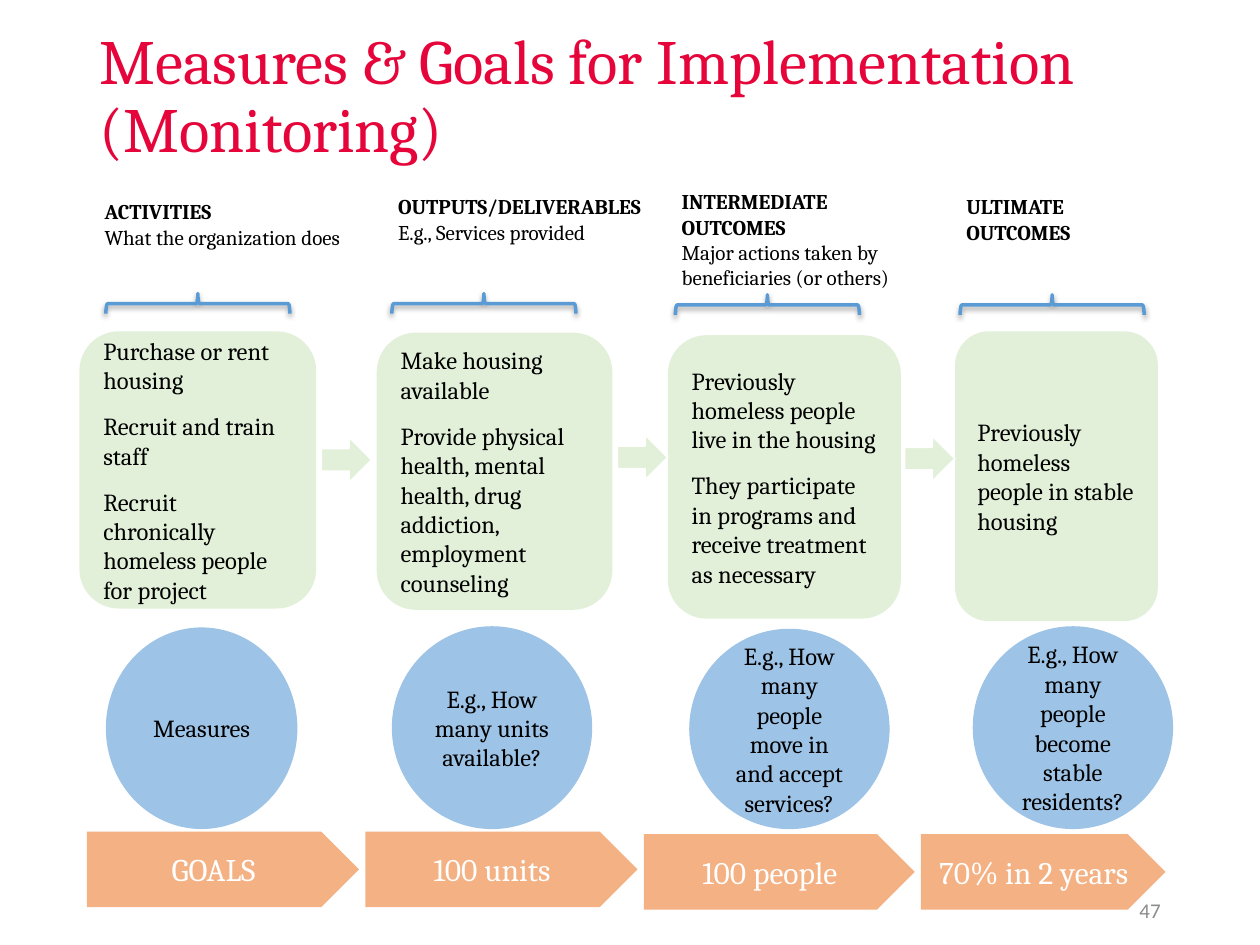
from lxml import etree
from pptx import Presentation
from pptx.dml.color import RGBColor
from pptx.enum.shapes import MSO_SHAPE
from pptx.enum.text import MSO_ANCHOR, PP_ALIGN
from pptx.oxml import parse_xml
from pptx.oxml.ns import nsdecls
from pptx.util import Inches, Pt

LEFT, CENTER, RIGHT = PP_ALIGN.LEFT, PP_ALIGN.CENTER, PP_ALIGN.RIGHT
TOP, MIDDLE = MSO_ANCHOR.TOP, MSO_ANCHOR.MIDDLE
CARD, ARROW = MSO_SHAPE.ROUNDED_RECTANGLE, MSO_SHAPE.RIGHT_ARROW
CIRCLE, BANNER = MSO_SHAPE.OVAL, MSO_SHAPE.PENTAGON
BRACE = MSO_SHAPE.LEFT_BRACE

RED = RGBColor(0xE5, 0x05, 0x3A)
BLACK = RGBColor(0, 0, 0)
WHITE = RGBColor(0xFF, 0xFF, 0xFF)
GRAY = RGBColor(0x8C, 0x8C, 0x8C)
BLUE = RGBColor(0x5B, 0x9B, 0xD5)
PALE_BLUE = RGBColor(0x9D, 0xC3, 0xE6)
GREEN = RGBColor(0xE2, 0xF0, 0xD9)
ORANGE = RGBColor(0xF4, 0xB1, 0x83)

TITLE = "Measures & Goals for Implementation (Monitoring)"
PAGE_NUMBER = "47"
STAGES = [
    {
        "heading": ["ACTIVITIES", "What the organization does"],
        "heading_at": (0.78, 1.53, 2.12, 0.54),
        "brace_at": (0.84, 2.33),
        "steps": ["Purchase or rent housing", "Recruit and train staff",
                  "Recruit chronically homeless people for project"],
        "card_at": (0.63, 2.63, 1.88, 2.2),
        "measure": "Measures",
        "circle_at": (0.84, 4.98, 1.52, 1.6),
        "goal": "GOALS",
        "banner_at": (0.69, 6.6, 2.16, 0.6),
    },
    {
        "heading": ["OUTPUTS/DELIVERABLES", "E.g., Services provided"],
        "heading_at": (3.11, 1.49, 2.12, 0.74),
        "brace_at": (3.11, 2.33),
        "steps": ["Make housing available",
                  "Provide physical health, mental health, drug addiction, "
                  "employment counseling"],
        "card_at": (2.99, 2.64, 1.87, 2.2),
        "measure": "E.g., How many units available?",
        "circle_at": (3.11, 4.97, 1.59, 1.61),
        "goal": "100 units",
        "banner_at": (2.9, 6.6, 2.16, 0.6),
    },
    {
        "heading": ["INTERMEDIATE OUTCOMES",
                    "Major actions taken by beneficiaries (or others)"],
        "heading_at": (5.36, 1.45, 2.12, 0.85),
        "brace_at": (5.36, 2.34),
        "steps": ["Previously homeless people live in the housing",
                  "They participate in programs and receive treatment "
                  "as necessary"],
        "card_at": (5.3, 2.66, 1.85, 2.25),
        "measure": "E.g., How many people move in and accept services?",
        "circle_at": (5.47, 4.99, 1.59, 1.59),
        "goal": "100 people",
        "banner_at": (5.11, 6.62, 2.15, 0.6),
    },
    {
        "heading": ["ULTIMATE OUTCOMES"],
        "heading_at": (7.62, 1.49, 1.33, 0.54),
        "brace_at": (7.62, 2.34),
        "steps": ["Previously homeless people in stable housing"],
        "card_at": (7.58, 2.63, 1.61, 2.3),
        "measure": "E.g., How many people become stable residents?",
        "circle_at": (7.72, 4.97, 1.59, 1.61),
        "goal": "70% in 2 years",
        "banner_at": (7.31, 6.62, 1.94, 0.6),
    },
]
ARROWS = [(2.55, 3.47), (4.9, 3.45), (7.18, 3.46)]
ARROW_SIZE = (0.4, 0.36)
BRACE_SPAN, BRACE_DEPTH = 1.46, 0.16
SHADOW = (
    f'<a:effectLst {nsdecls("a")}><a:outerShdw blurRad="38100" dist="22860" '
    'dir="5400000" rotWithShape="0"><a:srgbClr val="000000">'
    '<a:alpha val="35000"/></a:srgbClr></a:outerShdw></a:effectLst>'
)


def write(shape, paragraphs, size=14, color=BLACK, font="Cambria", align=LEFT,
          anchor=MIDDLE, gap=0, line_spacing=1.0, bold_first=False, inset=None):
    frame = shape.text_frame
    frame.word_wrap = True
    frame.vertical_anchor = anchor
    if inset is not None:
        frame.margin_left = frame.margin_right = Inches(inset)
        frame.margin_top = frame.margin_bottom = Inches(inset)
    for index, text in enumerate(paragraphs):
        para = frame.add_paragraph() if index else frame.paragraphs[0]
        para.alignment = align
        para.line_spacing = line_spacing
        if index:
            para.space_before = Pt(gap)
        span = para.add_run()
        span.text = text
        span.font.name = font
        span.font.size = Pt(size)
        span.font.bold = bold_first and index == 0
        span.font.color.rgb = color


def add_text(page, place, paragraphs, **style):
    box = page.shapes.add_textbox(*map(Inches, place))
    write(box, paragraphs, **style)


def add_block(page, kind, place, fill, line=None):
    block = page.shapes.add_shape(kind, *map(Inches, place))
    block.shadow.inherit = False
    block.fill.solid()
    block.fill.fore_color.rgb = fill
    if line is None:
        block.line.fill.background()
    else:
        block.line.color.rgb = line
        block.line.width = Pt(1)
    return block


def add_brace(page, left, top):
    place = (left + (BRACE_SPAN - BRACE_DEPTH) / 2,
             top - (BRACE_SPAN - BRACE_DEPTH) / 2, BRACE_DEPTH, BRACE_SPAN)
    brace = page.shapes.add_shape(BRACE, *map(Inches, place))
    brace.rotation = 90
    brace.fill.background()
    brace.line.color.rgb = BLUE
    brace.line.width = Pt(2)
    etree.strip_elements(brace.element.spPr, "{*}effectLst")
    brace.element.spPr.append(parse_xml(SHADOW))


def main():
    deck = Presentation()
    deck.slide_width, deck.slide_height = Inches(10), Inches(7.5)
    page = deck.slides.add_slide(deck.slide_layouts[6])

    add_text(page, (0.69, 0.24, 8.62, 1.08), [TITLE], size=36, color=RED,
             line_spacing=0.9)
    for stage in STAGES:
        add_text(page, stage["heading_at"], stage["heading"], size=12,
                 anchor=TOP, bold_first=True, inset=0.05)
        add_brace(page, *stage["brace_at"])
        card = add_block(page, CARD, stage["card_at"], GREEN)
        write(card, stage["steps"], gap=9.5)
        circle = add_block(page, CIRCLE, stage["circle_at"], PALE_BLUE)
        write(circle, [stage["measure"]], align=CENTER)
        banner = add_block(page, BANNER, stage["banner_at"], ORANGE)
        write(banner, [stage["goal"]], size=18, color=WHITE, align=CENTER)
    for corner in ARROWS:
        add_block(page, ARROW, corner + ARROW_SIZE, GREEN, line=WHITE)
    add_text(page, (7.06, 7.02, 2.25, 0.4), [PAGE_NUMBER], size=12, color=GRAY,
             font="Calibri", align=RIGHT)

    deck.save("out.pptx")


if __name__ == "__main__":
    main()
